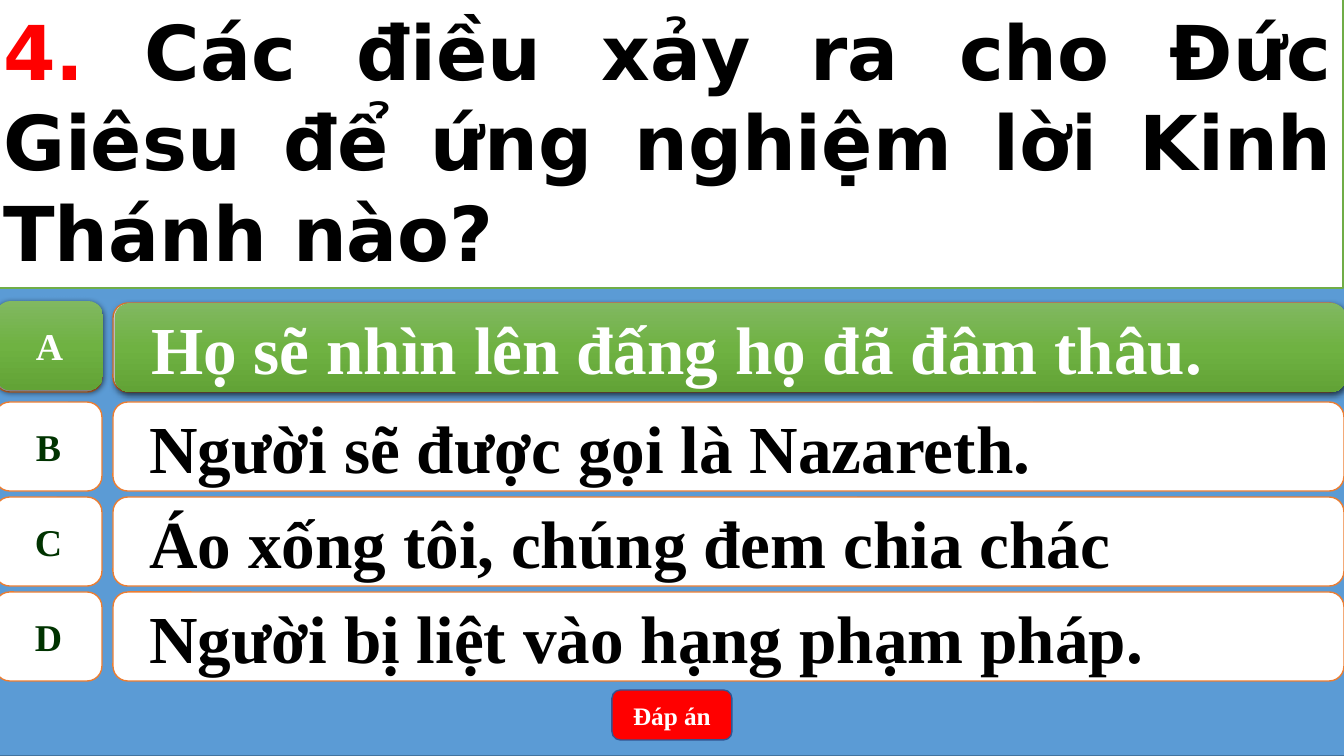
import pptx
import pptx.dml.color
import pptx.enum.shapes
import pptx.enum.text
import pptx.oxml.ns
import pptx.util
from dataclasses import dataclass
from lxml import etree

EMU_PER_PX = 914400 / 100.8
SHAPES = pptx.enum.shapes.MSO_SHAPE
ALIGN = pptx.enum.text.PP_ALIGN
qn = pptx.oxml.ns.qn


@dataclass(frozen=True)
class Theme:
    blue: str = "5B9BD5"
    blue_edge: str = "43739E"
    white: str = "FFFFFF"
    black: str = "000000"
    red: str = "FF0000"
    button_edge: str = "325491"
    orange: str = "ED7D31"
    green: str = "70AD47"
    letter: str = "003300"
    highlight: tuple = ((0, "81B861"), (50, "6FB242"), (100, "62A336"))
    question_font: str = "DejaVu Sans"
    answer_font: str = "Times New Roman"
    question_size: int = 54
    answer_size: int = 48
    letter_size: int = 27
    button_size: int = 18


def px(length):
    return pptx.util.Emu(round(length * EMU_PER_PX))


def rgb(colour):
    return pptx.dml.color.RGBColor.from_string(colour)


class QuizSlide:
    def __init__(self, presentation, theme):
        self.theme = theme
        self.slide = presentation.slides.add_slide(presentation.slide_layouts[5])

    def paint(self, shape, fill, edge):
        shape.fill.solid()
        shape.fill.fore_color.rgb = rgb(fill)
        shape.line.color.rgb = rgb(edge)
        shape.line.width = pptx.util.Pt(1)

    def format_run(self, run, size, colour, font):
        run.font.name = font
        run.font.size = pptx.util.Pt(size)
        run.font.bold = True
        run.font.color.rgb = rgb(colour)

    def box(self, kind, bounds, fill, edge):
        shape = self.slide.shapes.add_shape(kind, *map(px, bounds))
        shape.shadow.inherit = False
        self.paint(shape, fill, edge)
        return shape

    def label(self, shape, text, size, colour, align=ALIGN.CENTER, wrap=True):
        frame = shape.text_frame
        frame.text = text
        frame.word_wrap = wrap
        frame.vertical_anchor = pptx.enum.text.MSO_ANCHOR.MIDDLE
        paragraph = frame.paragraphs[0]
        paragraph.alignment = align
        self.format_run(paragraph.runs[0], size, colour, self.theme.answer_font)
        return paragraph

    def highlight(self, shape):
        # Three-stop green gradient, top to bottom
        shape.line.fill.background()
        shape.fill.gradient()
        shape.fill.gradient_angle = 270
        properties = shape.element.spPr
        stops = properties.find(".//" + qn("a:gsLst"))
        stops.clear()
        for position, colour in self.theme.highlight:
            stop = etree.SubElement(stops, qn("a:gs"), pos=str(position * 1000))
            etree.SubElement(stop, qn("a:srgbClr"), val=colour)
        # Soft shadow below
        shadow = etree.SubElement(
            properties.find(qn("a:effectLst")), qn("a:outerShdw"),
            blurRad="57150", dist="19050", dir="5400000", rotWithShape="0")
        colour = etree.SubElement(shadow, qn("a:srgbClr"), val=self.theme.black)
        etree.SubElement(colour, qn("a:alpha"), val="63000")

    def answer(self, letter, text, badge_at, bar_at, correct=False):
        theme = self.theme
        badge = self.box(SHAPES.FLOWCHART_ALTERNATE_PROCESS,
                         (*badge_at, 107, 89), theme.white, theme.orange)
        bar = self.box(SHAPES.ROUNDED_RECTANGLE,
                       (*bar_at, 1231, 89), theme.white, theme.orange)
        self.label(badge, letter, theme.letter_size,
                   theme.white if correct else theme.letter, wrap=False)
        paragraph = self.label(bar, text, theme.answer_size,
                               theme.white if correct else theme.black, ALIGN.LEFT)
        indent = paragraph._p.get_or_add_pPr()
        indent.set("marL", str(px(50)))
        indent.set("indent", str(-px(28)))
        if correct:
            self.highlight(badge)
            self.highlight(bar)

    def question(self, number, text, bounds):
        theme = self.theme
        title = self.slide.shapes.title
        title.left, title.top, title.width, title.height = map(px, bounds)
        self.paint(title, theme.white, theme.green)
        frame = title.text_frame
        frame.word_wrap = True
        frame.auto_size = pptx.enum.text.MSO_AUTO_SIZE.NONE
        frame.vertical_anchor = pptx.enum.text.MSO_ANCHOR.MIDDLE
        paragraph = frame.paragraphs[0]
        paragraph.alignment = ALIGN.JUSTIFY
        for part, colour in ((number, theme.red), (text, theme.black)):
            run = paragraph.add_run()
            run.text = part
            self.format_run(run, theme.question_size, colour, theme.question_font)
        # Bring the question in front of the backdrop
        self.slide.shapes._spTree.append(title.element)


def main():
    presentation = pptx.Presentation()
    presentation.slide_width, presentation.slide_height = px(1344), px(756)
    theme = Theme()
    quiz = QuizSlide(presentation, theme)

    # Backdrop
    quiz.box(SHAPES.RECTANGLE, (-5, 0, 1350, 756), theme.blue, theme.blue_edge)

    # Answers: the first stands apart, the rest follow at an equal pitch
    answers = (
        "Họ sẽ nhìn lên đấng họ đã đâm thâu.",
        "Người sẽ được gọi là Nazareth.",
        "Áo xống tôi, chúng đem chia chác",
        "Người bị liệt vào hạng phạm pháp.",
    )
    for index, (letter, text) in enumerate(zip("ABCD", answers)):
        top = 402 + 95 * (index - 1) if index else 303
        quiz.answer(letter, text, (-5, top), (113, top))

    # Answer button
    button = quiz.box(SHAPES.ROUNDED_RECTANGLE, (612, 690, 120, 50),
                      theme.red, theme.button_edge)
    quiz.label(button, "Đáp án", theme.button_size, theme.white)

    # Correct answer over its row
    quiz.answer("A", answers[0], (-4, 301), (115, 303), correct=True)

    # Question
    quiz.question("4. ", "Các điều xảy ra cho Đức Giêsu để ứng nghiệm lời Kinh Thánh nào?",
                  (-7, -7, 1350, 295))

    presentation.save("out.pptx")


if __name__ == "__main__":
    main()
